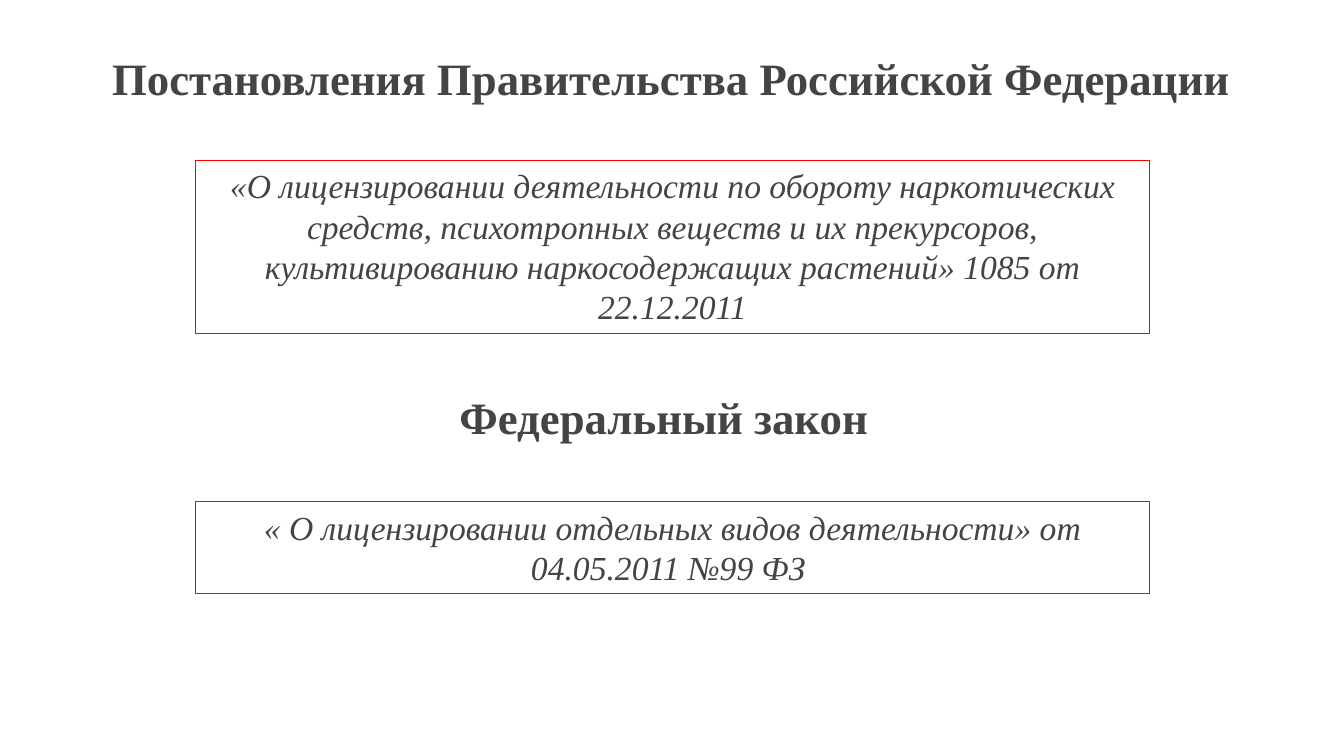
from pptx import Presentation
from pptx.dml.color import RGBColor
from pptx.enum.shapes import MSO_SHAPE as Shape
from pptx.enum.text import MSO_ANCHOR as Anchor, MSO_AUTO_SIZE as AutoSize, PP_ALIGN as Align
from pptx.util import Cm, Pt

GREY = RGBColor(0x44, 0x44, 0x44)
RED = RGBColor(0xFF, 0x00, 0x00)

# Text, then left, top, width, height in centimetres
TITLE = ("Постановления Правительства Российской Федерации", (2.57, 1.14, 28.98, 1.63))
LAW_HEADING = ("Федеральный закон", (11.33, 9.7, 11.2, 1.63))

ACT_LEFT, ACT_WIDTH = 4.93, 24.03
# Text, top, height in centimetres
ACTS = [
    ("«О лицензировании деятельности по обороту наркотических средств, "
     "психотропных веществ и их прекурсоров, культивированию "
     "наркосодержащих растений» 1085 от 22.12.2011", 4.04, 4.37),
    ("« О лицензировании отдельных видов деятельности» от 04.05.2011 №99 ФЗ ", 12.65, 2.31),
]

HEADING_FONT = {"name": "Times New Roman", "size": Pt(32), "bold": True}
ACT_FONT = {"name": "Times New Roman", "size": Pt(24), "italic": True}


def write(box, text, align, font):
    frame = box.text_frame
    frame.word_wrap = True
    frame.auto_size = AutoSize.NONE
    frame.vertical_anchor = Anchor.TOP
    para = frame.paragraphs[0]
    para.alignment = align
    span = para.add_run()
    span.text = text
    for name, value in font.items():
        setattr(span.font, name, value)
    span.font.color.rgb = GREY


def main():
    deck = Presentation()
    deck.slide_width, deck.slide_height = Cm(33.87), Cm(19.05)
    page = deck.slides.add_slide(deck.slide_layouts[5])

    text, area = TITLE
    title = page.shapes.title
    title.left, title.top, title.width, title.height = map(Cm, area)
    write(title, text, Align.LEFT, HEADING_FONT)

    text, area = LAW_HEADING
    heading = page.shapes.add_textbox(*map(Cm, area))
    write(heading, text, Align.LEFT, HEADING_FONT)

    for text, top, height in ACTS:
        area = (ACT_LEFT, top, ACT_WIDTH, height)
        act = page.shapes.add_shape(Shape.RECTANGLE, *map(Cm, area))
        act.shadow.inherit = False
        act.fill.background()
        act.line.color.rgb = RED
        act.line.width = Pt(0.75)
        write(act, text, Align.CENTER, ACT_FONT)

    deck.save("out.pptx")


if __name__ == "__main__":
    main()
